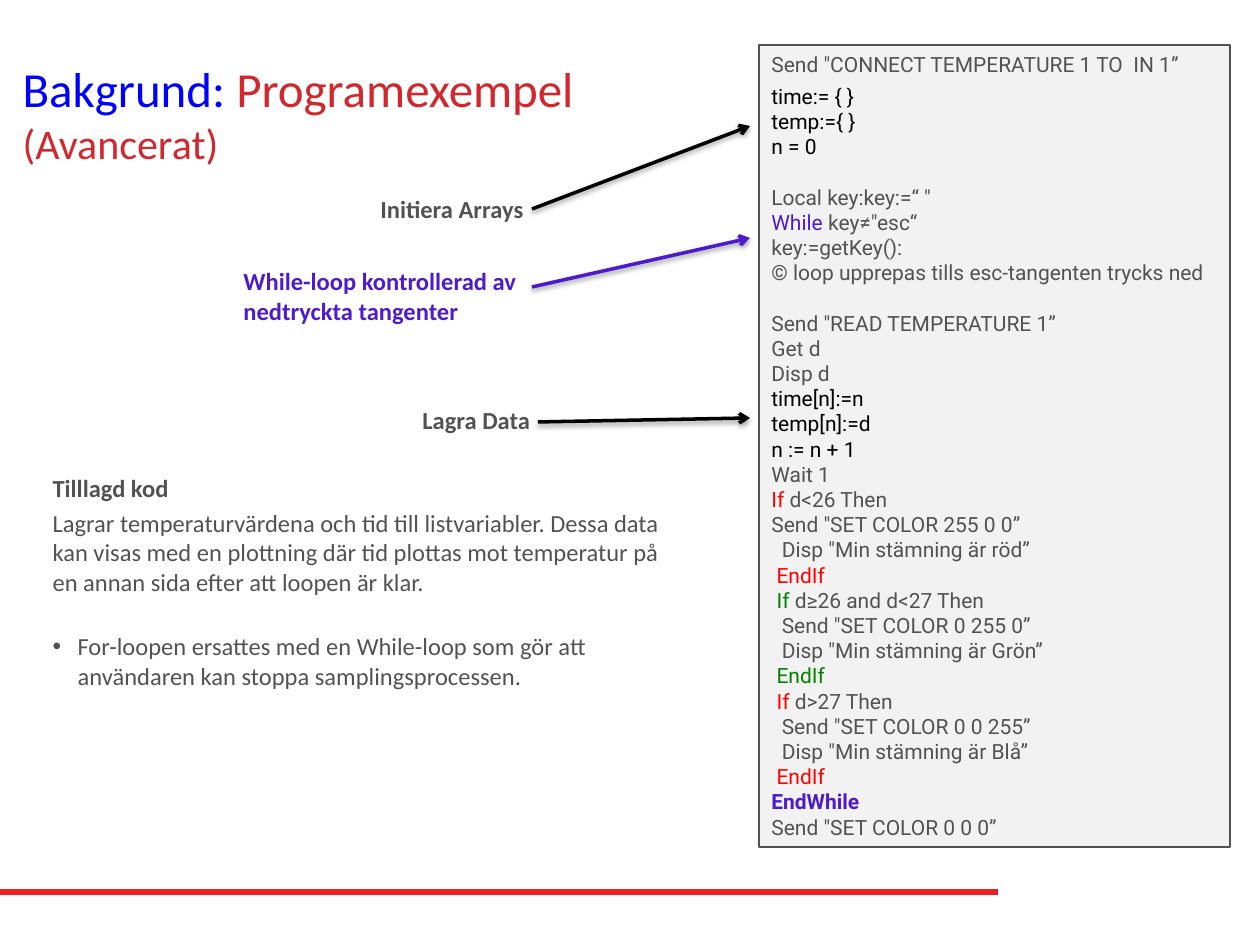
import pptx
import pptx.util
import pptx.dml.color
import pptx.enum.shapes
import pptx.enum.text
import pptx.oxml

GREY, BLACK, BLUE, BRICK = "525252", "000000", "0000FF", "D1282E"
VIOLET, RED, GREEN = "4D1BCB", "FF0000", "008000"
CODE_LINE = 14.4  # height of one code line, points

# Content
TITLE_LINES = [
    [("Bakgrund: ", BLUE, 28), ("Programexempel ", BRICK, 28)],
    [("(Avancerat)", BRICK, 24)],
]

# Code blocks: gap above in points, then lines of (text, colour) runs
CODE_BLOCKS = [
    (0, [[('Send "CONNECT TEMPERATURE 1 TO  IN 1”', GREY)]]),
    (4, [[("time:= { }", BLACK)], [("temp:={ }", BLACK)], [("n = 0", BLACK)]]),
    (CODE_LINE, [
        [('Local key:key:=“ "', GREY)],
        [("While ", VIOLET), ('key≠"esc“', GREY)],
        [("key:=getKey():", GREY)],
        [("© loop upprepas tills esc-tangenten trycks ned", GREY)],
    ]),
    (CODE_LINE, [
        [('Send "READ TEMPERATURE 1”', GREY)],
        [("Get d", GREY)],
        [("Disp d", GREY)],
        [("time[n]:=n", BLACK)],
        [("temp[n]:=d", BLACK)],
        [("n := n + 1", BLACK)],
        [("Wait 1", GREY)],
        [("If ", RED), ("d<26 Then", GREY)],
        [('Send "SET COLOR 255 0 0”', GREY)],
        [('  Disp "Min stämning är röd”', GREY)],
        [(" EndIf", RED)],
        [(" If ", GREEN), ("d≥26 and d<27 Then", GREY)],
        [('  Send "SET COLOR 0 255 0”', GREY)],
        [('  Disp "Min stämning är Grön”', GREY)],
        [(" EndIf", GREEN)],
        [(" If", RED), (" d>27 Then", GREY)],
        [('  Send "SET COLOR 0 0 255”', GREY)],
        [('  Disp "Min stämning är Blå”', GREY)],
        [(" EndIf", RED)],
        [("EndWhile", VIOLET, True)],
        [('Send "SET COLOR 0 0 0”', GREY)],
    ]),
]

# Description: text, bold, bulleted, space after in points
DESCRIPTION = [
    ("Tilllagd kod", True, False, 3),
    ("Lagrar temperaturvärdena och tid till listvariabler. Dessa data kan visas "
     "med en plottning där tid plottas mot temperatur på en annan sida efter att "
     "loopen är klar.", False, False, 20),
    ("For-loopen ersattes med en While-loop som gör att användaren kan stoppa "
     "samplingsprocessen.", False, True, 0),
]

# Labels with their arrows: text, colour, box, arrow start, arrow end
LABELS = [
    ("Initiera Arrays", GREY, (368, 188, 219, 43), BLACK, (532, 209), (750, 126)),
    ("While-loop kontrollerad av nedtryckta tangenter", VIOLET,
     (231, 260, 301, 72), VIOLET, (532, 287), (750, 238)),
    ("Lagra Data", GREY, (410, 399, 154, 43), BLACK, (538, 422), (750, 418)),
]

TITLE_BOX = (10, 35, 1250, 157)
CODE_BOX = (759, 45, 471, 802)
DESCRIPTION_BOX = (40, 467, 659, 285)
RULE_START, RULE_END = (0, 892), (998, 892)
BULLET_INDENT = 25

NS = 'xmlns:a="http://schemas.openxmlformats.org/drawingml/2006/main"'
NO_EFFECT = f"<a:effectLst {NS}/>"
SOFT_SHADOW = (
    f'<a:effectLst {NS}><a:outerShdw blurRad="39370" dist="20320" dir="5400000" '
    'rotWithShape="0"><a:srgbClr val="000000"><a:alpha val="38000"/></a:srgbClr>'
    "</a:outerShdw></a:effectLst>"
)


def px(n):
    return pptx.util.Emu(round(n * 914400 / 126))


def colour(value):
    return pptx.dml.color.RGBColor.from_string(value)


def set_all(target, **values):
    for key, value in values.items():
        setattr(target, key, value)


def place(part, box):
    set_all(part, **dict(zip(("left", "top", "width", "height"), map(px, box))))


def prepare(frame, anchor=pptx.enum.text.MSO_ANCHOR.TOP):
    set_all(frame, word_wrap=True, vertical_anchor=anchor,
            auto_size=pptx.enum.text.MSO_AUTO_SIZE.NONE)


def next_paragraph(frame, first, before=0, after=0):
    paragraph = frame.paragraphs[0] if first else frame.add_paragraph()
    set_all(paragraph, alignment=pptx.enum.text.PP_ALIGN.LEFT, line_spacing=1.0,
            space_before=pptx.util.Pt(before), space_after=pptx.util.Pt(after))
    return paragraph


def add_run(paragraph, text, hue, size, bold=False, face="Calibri"):
    run = paragraph.add_run()
    run.text = text
    set_all(run.font, name=face, size=pptx.util.Pt(size), bold=bold)
    run.font.color.rgb = colour(hue)


def add_line(slide, start, end, hue, weight, effect, arrow=False):
    line = slide.shapes.add_connector(
        pptx.enum.shapes.MSO_CONNECTOR.STRAIGHT, *map(px, start + end))
    line.line.color.rgb = colour(hue)
    line.line.width = pptx.util.Pt(weight)
    if arrow:
        line.line._get_or_add_ln().append(
            pptx.oxml.parse_xml(f'<a:tailEnd {NS} type="arrow"/>'))
    line._element.spPr.append(pptx.oxml.parse_xml(effect))


def set_bullet(paragraph, bulleted):
    indent = px(BULLET_INDENT) if bulleted else 0
    properties = paragraph._p.get_or_add_pPr()
    properties.set("marL", str(int(indent)))
    properties.set("indent", str(-int(indent)))
    mark = 'buChar {} char="•"' if bulleted else "buNone {}"
    properties.append(pptx.oxml.parse_xml(f"<a:{mark.format(NS)}/>"))


def main():
    deck = pptx.Presentation()
    set_all(deck, slide_width=px(1260), slide_height=px(945))
    slide = deck.slides.add_slide(deck.slide_layouts[1])

    # Red rule at the foot
    add_line(slide, RULE_START, RULE_END, "ED1D24", 3, NO_EFFECT)

    # Title
    title = slide.shapes.title
    place(title, TITLE_BOX)
    prepare(title.text_frame, pptx.enum.text.MSO_ANCHOR.MIDDLE)
    heading = next_paragraph(title.text_frame, True)
    for number, runs in enumerate(TITLE_LINES):
        if number:
            heading.add_line_break()
        for run in runs:
            add_run(heading, *run)

    # Code panel
    panel = slide.shapes.add_shape(
        pptx.enum.shapes.MSO_SHAPE.RECTANGLE, *map(px, CODE_BOX))
    panel.shadow.inherit = False
    panel.fill.solid()
    panel.fill.fore_color.rgb = colour("F2F2F2")
    panel.line.color.rgb = colour(GREY)
    panel.line.width = pptx.util.Pt(0.75)
    prepare(panel.text_frame)
    for block, (gap, lines) in enumerate(CODE_BLOCKS):
        for number, runs in enumerate(lines):
            paragraph = next_paragraph(panel.text_frame, block == number == 0,
                                       before=0 if number else gap)
            for text, hue, *bold in runs:
                add_run(paragraph, text, hue, 12, bool(bold), "Roboto")

    # Description
    description = slide.placeholders[1]
    place(description, DESCRIPTION_BOX)
    prepare(description.text_frame)
    for number, (text, bold, bulleted, after) in enumerate(DESCRIPTION):
        paragraph = next_paragraph(description.text_frame, number == 0, after=after)
        set_bullet(paragraph, bulleted)
        add_run(paragraph, text, GREY, 14, bold)

    # Labels and arrows into the code
    for text, hue, box, arrow_hue, start, end in LABELS:
        add_line(slide, start, end, arrow_hue, 2, SOFT_SHADOW, arrow=True)
        label = slide.shapes.add_textbox(*map(px, box)).text_frame
        prepare(label)
        add_run(next_paragraph(label, True), text, hue, 14, True)

    deck.save("out.pptx")


if __name__ == "__main__":
    main()
